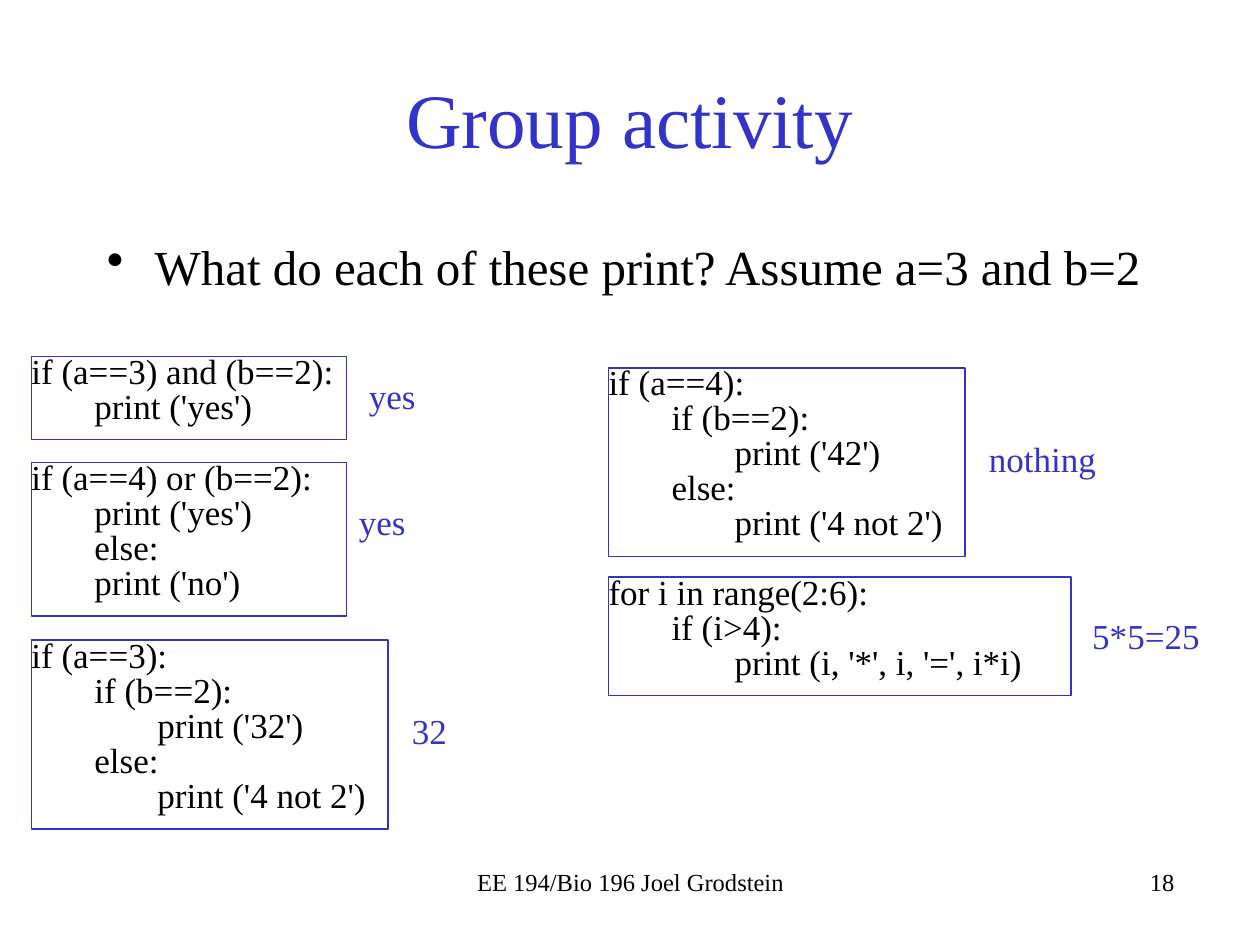
from dataclasses import dataclass

from lxml import etree
from pptx import Presentation
from pptx.dml.color import RGBColor
from pptx.enum import shapes, text
from pptx.oxml.ns import qn
from pptx.util import Inches, Pt

COLORS = {"accent": "3333CC", "ink": "000000"}
FONT = "Times New Roman"
CODE_SIZE = 20
INDENT = 0.5
LEFT_COLUMN, RIGHT_COLUMN = 0.25, 4.83


@dataclass
class Box:
    left: float
    top: float
    width: float
    height: float

    def lengths(self) -> list:
        return [Inches(v) for v in (self.left, self.top, self.width, self.height)]


@dataclass
class Exercise:
    """Code lines, each with its indent level, and the answer beside them."""
    code_box: Box
    code: list[tuple[int, str]]
    answer_box: Box
    answer: str


def nested_if(outer: str, printed: str) -> list[tuple[int, str]]:
    return [(0, outer), (1, "if (b==2):"), (2, f"print ('{printed}')"),
            (1, "else:"), (2, "print ('4 not 2')")]


EXERCISES = [
    Exercise(Box(LEFT_COLUMN, 2.83, 2.5, 0.66),
             [(0, "if (a==3) and (b==2):"), (1, "print ('yes')")],
             Box(2.83, 2.92, 0.67, 0.44), "yes"),
    Exercise(Box(LEFT_COLUMN, 3.67, 2.5, 1.22),
             [(0, "if (a==4) or (b==2):"), (1, "print ('yes')"),
              (1, "else:"), (1, "print ('no')")],
             Box(2.75, 3.92, 0.67, 0.44), "yes"),
    Exercise(Box(LEFT_COLUMN, 5.08, 2.83, 1.5), nested_if("if (a==3):", "32"),
             Box(3.17, 5.58, 0.67, 0.44), "32"),
    Exercise(Box(RIGHT_COLUMN, 2.92, 2.83, 1.5), nested_if("if (a==4):", "42"),
             Box(7.75, 3.42, 1.42, 0.44), "nothing"),
    Exercise(Box(RIGHT_COLUMN, 4.58, 3.67, 0.94),
             [(0, "for i in range(2:6):"), (1, "if (i>4):"),
              (2, "print (i, '*', i, '=', i*i)")],
             Box(8.57, 4.83, 1.42, 0.44), "5*5=25"),
]


def write(paragraph, content: str, *, size: float = CODE_SIZE, color: str = "ink",
          align=text.PP_ALIGN.LEFT) -> None:
    paragraph.alignment = align
    run = paragraph.add_run()
    run.text = content
    run.font.name = FONT
    run.font.size = Pt(size)
    run.font.color.rgb = RGBColor.from_string(COLORS[color])


def add_text(slide, box: Box, content: str, *, anchor=text.MSO_ANCHOR.TOP, **style):
    """Add a one-paragraph text box and return its paragraph."""
    frame = slide.shapes.add_textbox(*box.lengths()).text_frame
    frame.word_wrap = True
    frame.vertical_anchor = anchor
    write(frame.paragraphs[0], content, **style)
    return frame.paragraphs[0]


def add_bullet(paragraph, hanging: float) -> None:
    properties = paragraph._p.get_or_add_pPr()
    properties.set("marL", str(Inches(hanging)))
    properties.set("indent", str(-Inches(hanging)))
    etree.SubElement(properties, qn("a:buChar")).set("char", "•")


def add_exercise(slide, exercise: Exercise) -> None:
    panel = slide.shapes.add_shape(shapes.MSO_SHAPE.RECTANGLE,
                                   *exercise.code_box.lengths())
    panel.shadow.inherit = False
    panel.fill.background()
    panel.line.color.rgb = RGBColor.from_string(COLORS["accent"])
    panel.line.width = Pt(0.75)

    frame = panel.text_frame
    frame.word_wrap = True
    frame.vertical_anchor = text.MSO_ANCHOR.TOP
    frame.margin_left = frame.margin_top = frame.margin_right = 0
    frame.margin_bottom = Inches(0.1)
    for number, (level, line) in enumerate(exercise.code):
        paragraph = frame.add_paragraph() if number else frame.paragraphs[0]
        paragraph.level = level
        paragraph.line_spacing = Pt(CODE_SIZE)
        properties = paragraph._p.get_or_add_pPr()
        properties.set("marL", str(Inches(level * INDENT)))
        properties.set("indent", "0")
        write(paragraph, line)

    add_text(slide, exercise.answer_box, exercise.answer, color="accent")


def main() -> None:
    deck = Presentation()
    deck.slide_width, deck.slide_height = Inches(10), Inches(7.5)
    slide = deck.slides.add_slide(deck.slide_layouts[6])

    add_text(slide, Box(0.75, 0.31, 8.5, 1.25), "Group activity", size=44,
             color="accent", align=text.PP_ALIGN.CENTER,
             anchor=text.MSO_ANCHOR.MIDDLE)
    question = add_text(slide, Box(0.75, 1.83, 8.83, 0.67),
                        "What do each of these print? Assume a=3 and b=2", size=28)
    question.space_before = Pt(5.6)
    add_bullet(question, 0.38)

    for exercise in EXERCISES:
        add_exercise(slide, exercise)

    add_text(slide, Box(3.42, 6.83, 3.17, 0.5), "EE 194/Bio 196 Joel Grodstein",
             size=14, align=text.PP_ALIGN.CENTER)
    add_text(slide, Box(6.25, 6.83, 3.17, 0.5), "18", size=14,
             align=text.PP_ALIGN.RIGHT)
    deck.save("out.pptx")


if __name__ == "__main__":
    main()
